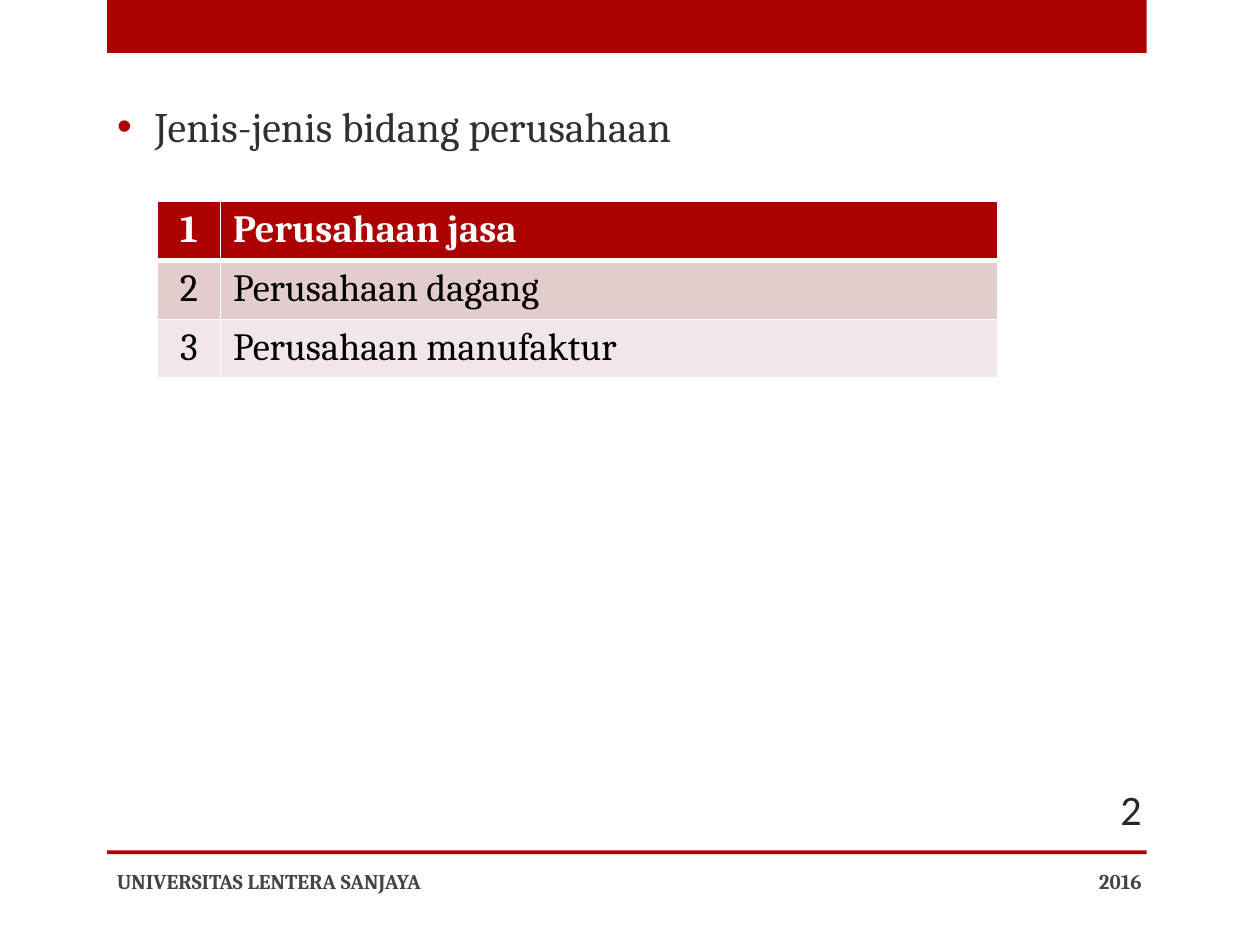
from lxml.etree import SubElement
from pptx import Presentation
from pptx.dml.color import RGBColor
from pptx.enum.shapes import MSO_SHAPE
from pptx.enum.text import MSO_ANCHOR, PP_ALIGN
from pptx.oxml.ns import qn
from pptx.util import Inches, Pt

RED = RGBColor(0xAD, 0x01, 0x01)
ROSE = RGBColor(0xE3, 0xCC, 0xCC)
PALE = RGBColor(0xF1, 0xE7, 0xE7)
WHITE = RGBColor(0xFF, 0xFF, 0xFF)
BLACK = RGBColor(0, 0, 0)
BODY_GREY = RGBColor(0x30, 0x30, 0x30)
FOOTER_GREY = RGBColor(0x45, 0x45, 0x45)
NUMBER_GREY = RGBColor(0x26, 0x26, 0x26)

FOOTER = {"name": "Cambria", "size": Pt(12), "bold": True}
NUMBER = {"name": "Calibri", "size": Pt(24), "bold": False}
BODY = {"name": "Cambria", "size": Pt(24), "bold": False}
CELL = {"name": "Cambria", "size": Pt(22)}

COMPANY_TYPES = ["Perusahaan jasa", "Perusahaan dagang", "Perusahaan manufaktur"]


def write(tf, text, color, fmt, align=PP_ALIGN.LEFT):
    p = tf.paragraphs[0]
    p.alignment = align
    r = p.add_run()
    r.text = text
    for name, value in fmt.items():
        setattr(r.font, name, value)
    r.font.color.rgb = color
    return p


def add_bar(s, top, height):
    sp = s.shapes.add_shape(MSO_SHAPE.RECTANGLE, Inches(0.85), Inches(top),
                            Inches(8.25), Inches(height))
    sp.shadow.inherit = False
    sp.fill.solid()
    sp.fill.fore_color.rgb = RED
    sp.line.fill.background()


def add_label(s, box, text, color, fmt, align=PP_ALIGN.LEFT):
    tf = s.shapes.add_textbox(*map(Inches, box)).text_frame
    tf.word_wrap = True
    tf.vertical_anchor = MSO_ANCHOR.MIDDLE
    write(tf, text, color, fmt, align)


def fill_body(sp, text):
    sp.left, sp.top, sp.width, sp.height = map(Inches, (0.83, 0.75, 8.25, 5.97))
    p = write(sp.text_frame, text, BODY_GREY, BODY)
    pPr = p._p.get_or_add_pPr()
    pPr.set("marL", str(Inches(0.3)))
    pPr.set("indent", str(-Inches(0.3)))
    color = SubElement(pPr, qn("a:buClr"))
    SubElement(color, qn("a:srgbClr"), val=str(RED))
    SubElement(pPr, qn("a:buFont"), typeface="Arial")
    SubElement(pPr, qn("a:buChar"), char="•")


def set_borders(cell, widths):
    tcPr = cell._tc.get_or_add_tcPr()
    for i, (side, width) in enumerate(widths.items()):
        ln = SubElement(tcPr, qn(f"a:ln{side}"), w=str(Pt(width)))
        fill = SubElement(ln, qn("a:solidFill"))
        SubElement(fill, qn("a:srgbClr"), val=str(WHITE))
        tcPr.insert(i, ln)  # borders come before the cell fill


def add_company_table(s, names):
    table = s.shapes.add_table(len(names), 2, Inches(1.25), Inches(1.6),
                               Inches(6.67), Inches(0.41 * len(names))).table
    for col, width in zip(table.columns, (0.5, 6.17)):
        col.width = Inches(width)
    for i, name in enumerate(names):
        header = i == 0
        fill = RED if header else (PALE, ROSE)[i % 2]
        borders = {"L": 1, "R": 1, "T": 3 if i == 1 else 1, "B": 3 if header else 1}
        columns = ((str(i + 1), PP_ALIGN.CENTER), (name, PP_ALIGN.LEFT))
        for j, (text, align) in enumerate(columns):
            cell = table.cell(i, j)
            cell.fill.solid()
            cell.fill.fore_color.rgb = fill
            set_borders(cell, borders)
            write(cell.text_frame, text, WHITE if header else BLACK,
                  {**CELL, "bold": header}, align)


def main():
    prs = Presentation()
    prs.slide_width, prs.slide_height = Inches(10), Inches(7.5)
    s = prs.slides.add_slide(prs.slide_layouts[1])

    # Red bars at the top and above the footer
    add_bar(s, 0, 0.42)
    add_bar(s, 6.75, 0.03)

    # Body text; this slide has no title
    title = s.shapes.title._element
    title.getparent().remove(title)
    fill_body(s.placeholders[1], "Jenis-jenis bidang perusahaan")

    # Footer and slide number
    add_label(s, (6.83, 6.79, 2.33, 0.4), "2016", FOOTER_GREY, FOOTER, PP_ALIGN.RIGHT)
    add_label(s, (0.83, 6.79, 5.33, 0.4), "UNIVERSITAS LENTERA SANJAYA",
              FOOTER_GREY, FOOTER)
    add_label(s, (8.33, 6.22, 0.83, 0.4), "2", NUMBER_GREY, NUMBER, PP_ALIGN.RIGHT)

    # Table of company types
    add_company_table(s, COMPANY_TYPES)
    prs.save("out.pptx")


if __name__ == "__main__":
    main()
